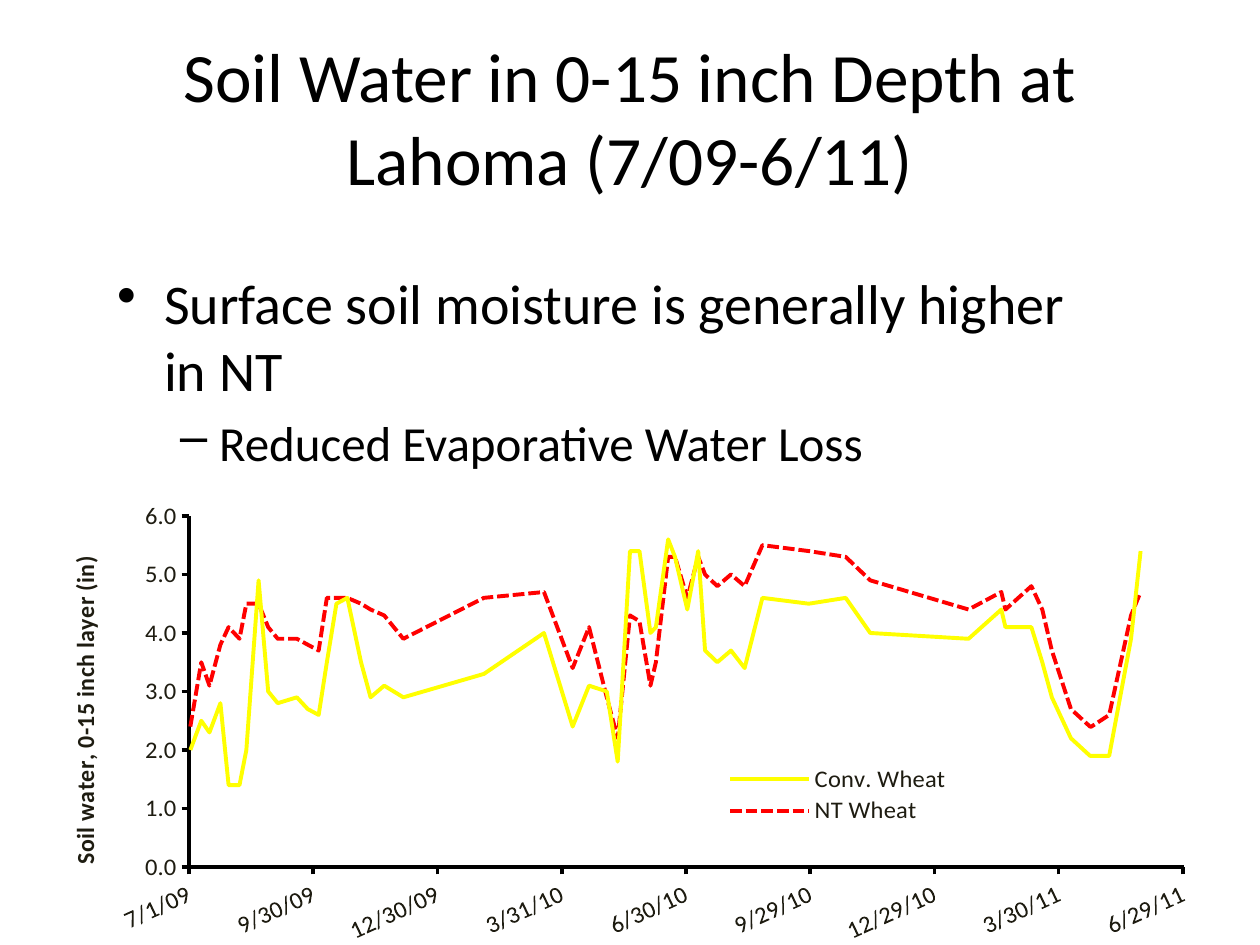
"""Build the slide on soil water at Lahoma with a line chart of two tillage systems."""
from lxml import etree
from pptx import Presentation
from pptx.chart.data import XyChartData
from pptx.dml.color import RGBColor
from pptx.enum.chart import XL_AXIS_CROSSES, XL_CHART_TYPE, XL_LEGEND_POSITION, XL_TICK_MARK
from pptx.enum.dml import MSO_LINE
from pptx.enum.text import MSO_ANCHOR, PP_ALIGN
from pptx.oxml.ns import qn
from pptx.util import Cm, Pt

SCATTER = XL_CHART_TYPE.XY_SCATTER_LINES_NO_MARKERS
LEGEND_RIGHT = XL_LEGEND_POSITION.RIGHT
AXIS_MINIMUM = XL_AXIS_CROSSES.MINIMUM
TICK_OUTSIDE, TICK_NONE = XL_TICK_MARK.OUTSIDE, XL_TICK_MARK.NONE
SOLID, DASHED = MSO_LINE.SOLID, MSO_LINE.SQUARE_DOT
MIDDLE, TOP = MSO_ANCHOR.MIDDLE, MSO_ANCHOR.TOP
CENTER, LEFT = PP_ALIGN.CENTER, PP_ALIGN.LEFT

FIRST_DATE, LAST_DATE, QUARTER = 39995, 40724, 91
SAMPLE_DAYS = [
    1, 9, 15, 23, 29, 37, 42, 51, 58, 65, 79, 87, 95, 101, 108, 116, 126, 133,
    143, 157, 216, 260, 281, 293, 306, 314, 323, 330, 338, 342, 351, 356, 365, 373, 378, 387,
    397, 407, 420, 454, 481, 499, 571, 595, 598, 617, 625, 632, 646, 660, 661, 674, 690, 697,
]
CONVENTIONAL = [
    2, 2.5, 2.3, 2.8, 1.4, 1.4, 2, 4.9, 3, 2.8, 2.9, 2.7, 2.6, 3.5, 4.5, 4.6, 3.5, 2.9,
    3.1, 2.9, 3.3, 4, 2.4, 3.1, 3, 1.8, 5.4, 5.4, 4, 4.1, 5.6, 5.3, 4.4, 5.4, 3.7, 3.5,
    3.7, 3.4, 4.6, 4.5, 4.6, 4, 3.9, 4.4, 4.1, 4.1, 3.5, 2.9, 2.2, 1.9, 1.9, 1.9, 3.9, 5.4,
]
NO_TILL = [
    2.4, 3.5, 3.1, 3.8, 4.1, 3.9, 4.5, 4.5, 4.1, 3.9, 3.9, 3.8, 3.7, 4.6, 4.6, 4.6, 4.5, 4.4,
    4.3, 3.9, 4.6, 4.7, 3.4, 4.1, 2.9, 2.2, 4.3, 4.2, 3.1, 3.5, 5.3, 5.3, 4.6, 5.3, 5, 4.8,
    5, 4.8, 5.5, 5.4, 5.3, 4.9, 4.4, 4.7, 4.4, 4.8, 4.4, 3.7, 2.7, 2.4, 2.4, 2.6, 4.3, 4.7,
]
SERIES = [
    ("Conv. Wheat", CONVENTIONAL, "FFFF00", SOLID),
    ("NT Wheat", NO_TILL, "FF0000", DASHED),
]


def color(value):
    """Turn a hex string into a colour."""
    return RGBColor.from_string(value)


def place(element, index, **fractions):
    """Give a chart part a manual layout in fractions of the chart."""
    for old_layout in element.findall(qn("c:layout")):
        element.remove(old_layout)
    layout = etree.Element(qn("c:layout"))
    manual = etree.SubElement(layout, qn("c:manualLayout"))
    if element.tag == qn("c:plotArea"):
        etree.SubElement(manual, qn("c:layoutTarget")).set("val", "inner")
    for name in ("x", "y"):
        etree.SubElement(manual, qn(f"c:{name}Mode")).set("val", "edge")
    for name, fraction in fractions.items():
        etree.SubElement(manual, qn(f"c:{name}")).set("val", str(fraction))
    element.insert(index, layout)


class SlideBuilder:
    """Hold the style and the current slide."""

    font_name = "Calibri"
    text_color = "000000"
    label_color = "1E1C11"
    label_size = 14

    def __init__(self, slide):
        """Keep the slide to draw on."""
        self.slide = slide

    def style_font(self, font, size, font_color):
        """Set typeface, size and colour."""
        font.name, font.size = self.font_name, Pt(size)
        font.color.rgb = color(font_color)

    def text(self, bounds, lines, size, anchor=TOP, alignment=LEFT):
        """Add a text box with one paragraph for each line."""
        text_frame = self.slide.shapes.add_textbox(*map(Cm, bounds)).text_frame
        text_frame.word_wrap = True
        text_frame.vertical_anchor = anchor
        text_frame.text = "\n".join(lines)
        for paragraph in text_frame.paragraphs:
            paragraph.alignment = alignment
            for run in paragraph.runs:
                self.style_font(run.font, size, self.text_color)
        return text_frame

    def bullets(self, bounds, items):
        """Add a bulleted list of text, level, bullet, size, margin and hanging indent."""
        text_frame = self.text(bounds, [item[0] for item in items], items[0][3])
        for paragraph, (_, level, bullet, size, margin, hanging) in zip(text_frame.paragraphs, items):
            paragraph.level = level
            if level:
                paragraph.space_before = Pt(0.2 * size)
            properties = paragraph._p.get_or_add_pPr()
            properties.set("marL", str(Cm(margin)))
            properties.set("indent", str(-Cm(hanging)))
            etree.SubElement(properties, qn("a:buChar")).set("char", bullet)
            for run in paragraph.runs:
                run.font.size = Pt(size)

    def axis(self, axis, minimum, maximum, unit, number_format):
        """Scale and style one chart axis."""
        axis.minimum_scale, axis.maximum_scale, axis.major_unit = minimum, maximum, unit
        axis.has_major_gridlines = False
        axis.major_tick_mark, axis.minor_tick_mark = TICK_OUTSIDE, TICK_NONE
        axis.crosses = AXIS_MINIMUM
        axis.tick_labels.number_format = number_format
        axis.tick_labels.number_format_is_linked = False
        self.style_font(axis.tick_labels.font, self.label_size, self.label_color)
        axis.format.line.color.rgb = color(self.text_color)
        axis.format.line.width = Pt(2)

    def chart(self, bounds, value_title):
        """Add the soil water chart."""
        data = XyChartData(number_format="0.0")
        for name, values, _, _ in SERIES:
            series = data.add_series(name)
            for day, value in zip(SAMPLE_DAYS, values):
                series.add_data_point(FIRST_DATE + day, value)
        chart = self.slide.shapes.add_chart(SCATTER, *map(Cm, bounds), data).chart
        chart.has_title = False
        self.style_font(chart.font, self.label_size, self.text_color)
        plot = chart.plots[0]
        plot.vary_by_categories = False
        for series, (_, _, line_color, dash) in zip(plot.series, SERIES):
            series.smooth = False
            series.format.line.color.rgb = color(line_color)
            series.format.line.width = Pt(2.25)
            series.format.line.dash_style = dash

        dates, depths = chart.category_axis, chart.value_axis
        self.axis(dates, FIRST_DATE, LAST_DATE, QUARTER, "m/d/yy;@")
        self.axis(depths, 0, 6, 1, "0.0")
        dates._element.find(qn("c:txPr")).find(qn("a:bodyPr")).set("rot", str(-25 * 60000))
        title_frame = depths.axis_title.text_frame
        title_frame.text = value_title
        title_font = title_frame.paragraphs[0].runs[0].font
        self.style_font(title_font, self.label_size, self.label_color)
        title_font.bold = True
        title_frame._txBody.find(qn("a:bodyPr")).set("rot", str(-90 * 60000))

        chart.has_legend = True
        chart.legend.position = LEGEND_RIGHT
        chart.legend.include_in_layout = False
        self.style_font(chart.legend.font, self.label_size, self.label_color)
        chart_element = chart._chartSpace.find(qn("c:chart"))
        place(chart_element.find(qn("c:plotArea")), 0, x=0.15, y=0.05, w=0.79, h=0.8)
        place(chart_element.find(qn("c:legend")), 1, x=0.57, y=0.61, w=0.19, h=0.15)
        place(depths._element.find(qn("c:title")), 1, x=0.05, y=0.15)


def main():
    """Build and save the presentation."""
    presentation = Presentation()
    presentation.slide_width, presentation.slide_height = Cm(25.4), Cm(19.05)
    builder = SlideBuilder(presentation.slides.add_slide(presentation.slide_layouts[6]))
    builder.text((1.27, 0.76, 22.86, 3.18), ["Soil Water in 0-15 inch Depth at Lahoma (7/09-6/11)"],
                 39.6, MIDDLE, CENTER)
    builder.bullets((2.11, 5.28, 20.12, 4.24), [
        ("Surface soil moisture is generally higher in NT", 0, "•", 32, 0.95, 0.95),
        ("Reduced Evaporative Water Loss", 1, "–", 28, 2.06, 0.79),
    ])
    builder.chart((0, 9.96, 25.4, 9.09), "Soil water, 0-15 inch layer (in)")
    presentation.save("out.pptx")


if __name__ == "__main__":
    main()
